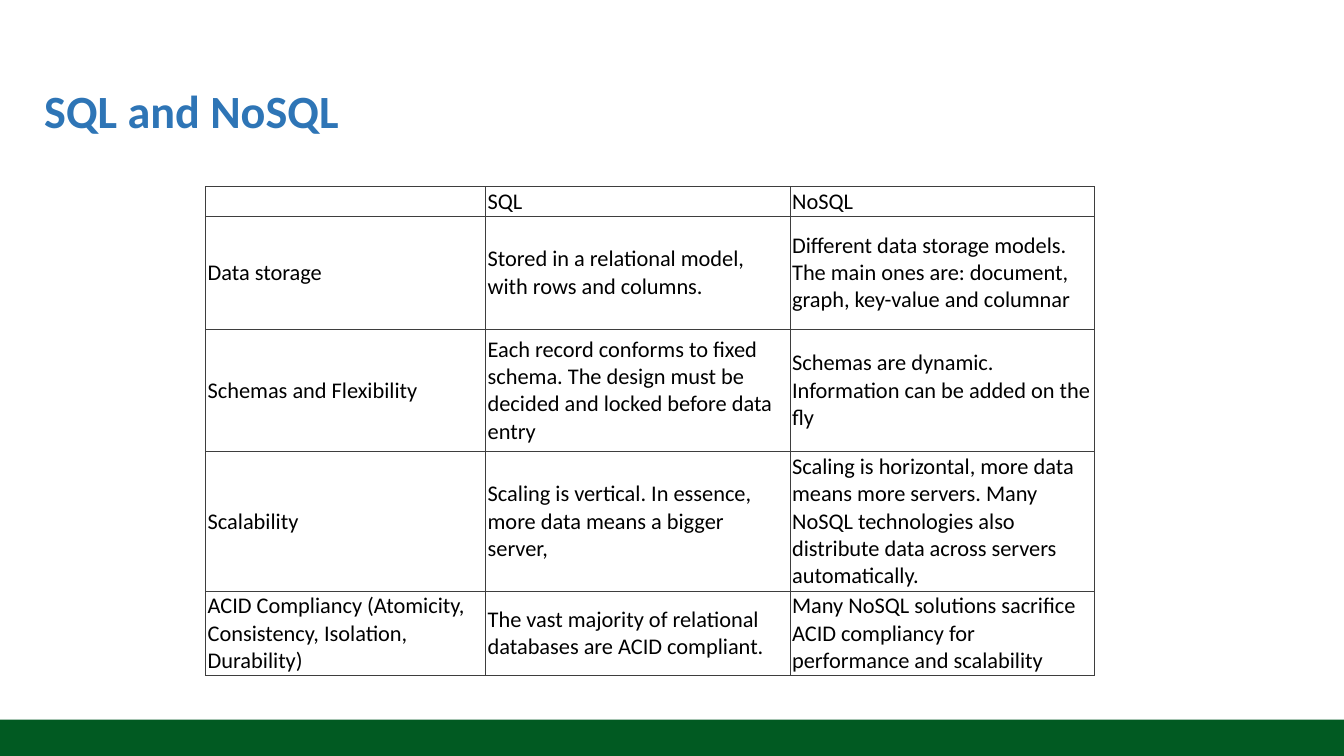
from lxml import etree
from pptx import Presentation
from pptx import util as u
from pptx.dml import color
from pptx.enum import shapes, text
from pptx.oxml import ns

TITLE = "SQL and NoSQL"
ROWS = [
    ("", "SQL", "NoSQL"),
    ("Data storage",
     "Stored in a relational model, with rows and columns.",
     "Different data storage models. The main ones are: document, graph, key-value and columnar"),
    ("Schemas and Flexibility",
     "Each record conforms to fixed schema. The design must be decided and locked before data entry",
     "Schemas are dynamic. Information can be added on the fly"),
    ("Scalability",
     "Scaling is vertical. In essence, more data means a bigger server,",
     "Scaling is horizontal, more data means more servers. Many NoSQL technologies also "
     "distribute data across servers automatically."),
    ("ACID Compliancy (Atomicity, Consistency, Isolation, Durability)",
     "The vast majority of relational databases are ACID compliant.",
     "Many NoSQL solutions sacrifice ACID compliancy for performance and scalability"),
]

THEME = {
    "font": "Calibri",
    "title_size": 33, "body_size": 16,
    "title": "2E75B6", "body": "000000",
    "band": "015A22", "paper": "FFFFFF", "border": "3E3E3E",
    "border_width": 0.75,
}

SLIDE_WIDTH, SLIDE_HEIGHT = 960, 540
BAND_HEIGHT = 26
TITLE_BOX = (24.5, 28.8, 913, 104.4)
TABLE_LEFT, TABLE_TOP = 146.9, 133.2
COLUMN_WIDTHS = (200, 217.5, 217.5)
ROW_HEIGHTS = (21.4, 80.8, 87.2, 99.8, 60)
CELL_FORMAT = {
    "margin_left": u.Pt(1.5), "margin_right": u.Pt(1.5),
    "margin_top": u.Pt(0.75), "margin_bottom": u.Pt(0.75),
    "vertical_anchor": text.MSO_ANCHOR.MIDDLE,
}


def rgb(name):
    return color.RGBColor.from_string(THEME[name])


def points(values):
    return [u.Pt(value) for value in values]


def apply(target, values):
    for name, value in values.items():
        setattr(target, name, value)


def paint(fill, name):
    fill.solid()
    fill.fore_color.rgb = rgb(name)


def write(paragraph, words, role, bold=False):
    run = paragraph.add_run()
    run.text = words
    apply(run.font, {"name": THEME["font"], "size": u.Pt(THEME[role + "_size"]), "bold": bold})
    run.font.color.rgb = rgb(role)


def add_borders(cell):
    properties = cell._tc.get_or_add_tcPr()
    for index, side in enumerate(("lnL", "lnR", "lnT", "lnB")):
        line = etree.Element(ns.qn("a:" + side), w=str(u.Pt(THEME["border_width"])))
        fill = etree.SubElement(line, ns.qn("a:solidFill"))
        etree.SubElement(fill, ns.qn("a:srgbClr"), val=THEME["border"])
        properties.insert(index, line)


def add_band(slide):
    band = slide.shapes.add_shape(
        shapes.MSO_SHAPE.RECTANGLE,
        *points((0, SLIDE_HEIGHT - BAND_HEIGHT, SLIDE_WIDTH, BAND_HEIGHT)))
    band.shadow.inherit = False
    paint(band.fill, "band")
    band.line.fill.background()


def add_title(slide):
    frame = slide.shapes.add_textbox(*points(TITLE_BOX)).text_frame
    apply(frame, {"word_wrap": True, "vertical_anchor": text.MSO_ANCHOR.MIDDLE})
    frame.paragraphs[0].line_spacing = 0.9
    write(frame.paragraphs[0], TITLE, "title", bold=True)


def add_comparison(slide):
    table = slide.shapes.add_table(
        len(ROWS), len(COLUMN_WIDTHS),
        *points((TABLE_LEFT, TABLE_TOP, sum(COLUMN_WIDTHS), sum(ROW_HEIGHTS)))).table
    apply(table, {"first_row": False, "horz_banding": False})
    for column, width in zip(table.columns, COLUMN_WIDTHS):
        column.width = u.Pt(width)
    for row, height, entries in zip(table.rows, ROW_HEIGHTS, ROWS):
        row.height = u.Pt(height)
        for cell, words in zip(row.cells, entries):
            apply(cell, CELL_FORMAT)
            paint(cell.fill, "paper")
            add_borders(cell)
            paragraph = cell.text_frame.paragraphs[0]
            if words:
                write(paragraph, words, "body")
            else:
                etree.SubElement(paragraph._p, ns.qn("a:endParaRPr"),
                                 sz=str(THEME["body_size"] * 100))


def main():
    presentation = Presentation()
    apply(presentation, {"slide_width": u.Pt(SLIDE_WIDTH), "slide_height": u.Pt(SLIDE_HEIGHT)})
    slide = presentation.slides.add_slide(presentation.slide_layouts[6])
    paint(slide.background.fill, "paper")
    add_band(slide)
    add_title(slide)
    add_comparison(slide)
    presentation.save("out.pptx")


if __name__ == "__main__":
    main()
